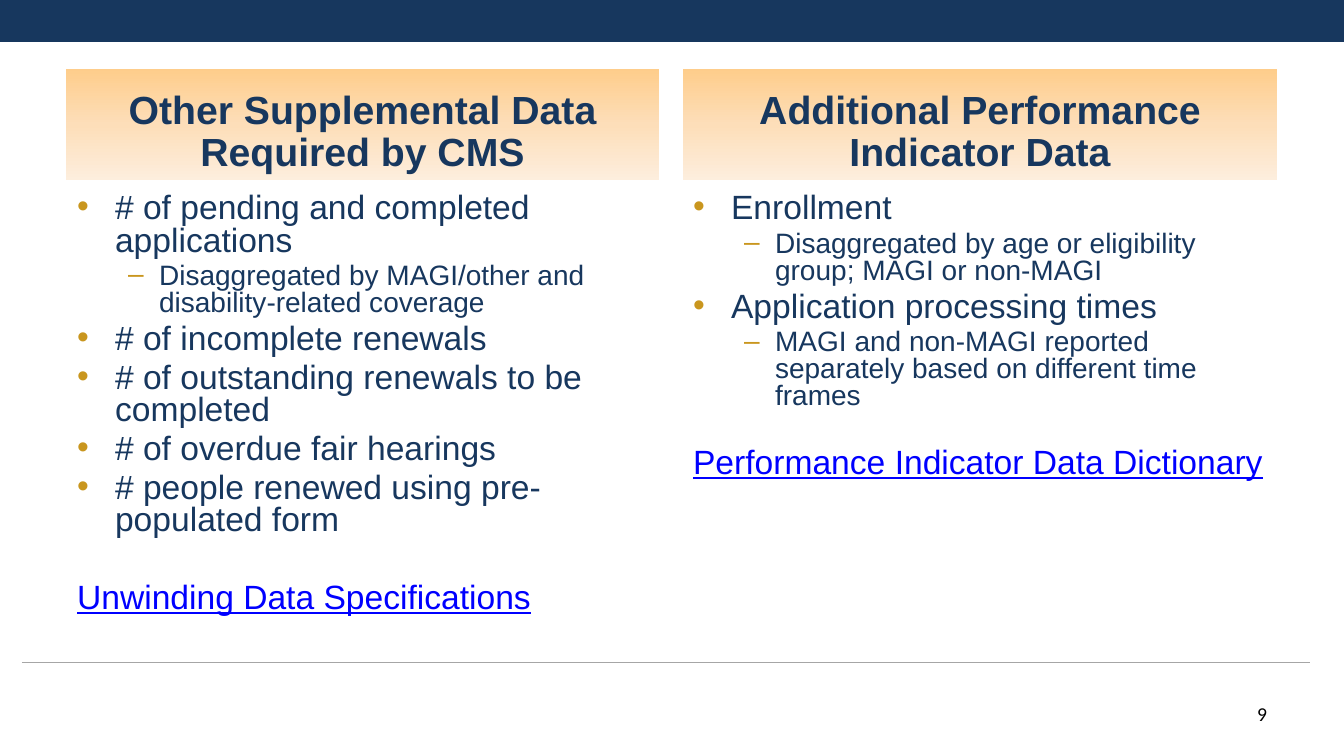
from copy import deepcopy
from dataclasses import dataclass

from lxml import etree
from pptx import Presentation
from pptx.dml.color import RGBColor
from pptx.enum.shapes import MSO_CONNECTOR, MSO_SHAPE
from pptx.enum.text import MSO_ANCHOR, MSO_AUTO_SIZE, PP_ALIGN
from pptx.oxml.ns import qn
from pptx.util import Inches, Pt

RECT = MSO_SHAPE.RECTANGLE
STRAIGHT = MSO_CONNECTOR.STRAIGHT
TOP, BOTTOM = MSO_ANCHOR.TOP, MSO_ANCHOR.BOTTOM
LEFT, CENTER, RIGHT = PP_ALIGN.LEFT, PP_ALIGN.CENTER, PP_ALIGN.RIGHT
FIXED = MSO_AUTO_SIZE.NONE
PX = Inches(1) / 100.8
ITEM, SUB, LINK = "item", "sub", "link"


def px(count):
    return round(count * PX)


@dataclass(frozen=True)
class Theme:
    navy: str = "17375E"
    gold: str = "C9961E"
    blue: str = "0000FF"
    gray: str = "A6A6A6"
    black: str = "000000"
    fade: tuple = ("FECD8B", "FDDEB9", "FDEEDD")
    font: str = "Arial"
    page_font: str = "Calibri"
    head: int = 28
    item: int = 24
    sub: int = 20
    page: int = 14


class Board:
    def __init__(self, deck, theme):
        self.theme = theme
        self.slide = deck.slides.add_slide(deck.slide_layouts[4])
        title = self.slide.shapes.title.element
        title.getparent().remove(title)

    def color(self, code):
        return RGBColor.from_string(code)

    def style(self, para, size, code, font=None, bold=False, line=False):
        for run in para.runs:
            run.font.size = Pt(size)
            run.font.name = font or self.theme.font
            run.font.bold = bold
            run.font.underline = line
            run.font.color.rgb = self.color(code)

    def place(self, idx, box, anchor):
        shape = self.slide.placeholders[idx]
        shape.left, shape.top, shape.width, shape.height = map(px, box)
        frame = shape.text_frame
        frame.auto_size = FIXED
        frame.word_wrap = True
        frame.vertical_anchor = anchor
        return shape

    def bar(self, box):
        shape = self.slide.shapes.add_shape(RECT, *map(px, box))
        shape.shadow.inherit = False
        shape.fill.solid()
        shape.fill.fore_color.rgb = self.color(self.theme.navy)
        shape.line.fill.background()

    def rule(self, x1, x2, y):
        line = self.slide.shapes.add_connector(STRAIGHT, px(x1), px(y), px(x2), px(y))
        line.line.color.rgb = self.color(self.theme.gray)
        line.line.width = Pt(0.75)
        etree.SubElement(line.element.spPr, qn("a:effectLst"))

    def fade(self, shape):
        shape.fill.gradient()
        shape.fill.gradient_angle = 270
        stops = shape.element.spPr.find(".//" + qn("a:gsLst"))
        stops.insert(1, deepcopy(stops[0]))
        for i, (stop, code) in enumerate(zip(shape.fill.gradient_stops, self.theme.fade)):
            stop.position = i / 2
            stop.color.rgb = self.color(code)

    def head(self, idx, box, text):
        shape = self.place(idx, box, BOTTOM)
        self.fade(shape)
        shape.text_frame.text = text
        para = shape.text_frame.paragraphs[0]
        para.alignment = CENTER
        para.line_spacing = 0.9
        para.space_before = Pt(0)
        self.style(para, self.theme.head, self.theme.navy, bold=True)

    def bullet(self, para, mark, left, hang):
        props = para._p.get_or_add_pPr()
        props.set("marL", str(px(left)))
        props.set("indent", str(px(-hang)))
        if not mark:
            etree.SubElement(props, qn("a:buNone"))
            return
        tint = etree.SubElement(props, qn("a:buClr"))
        etree.SubElement(tint, qn("a:srgbClr"), val=self.theme.gold)
        etree.SubElement(props, qn("a:buFont"), typeface=self.theme.font)
        etree.SubElement(props, qn("a:buChar"), char=mark)

    def list(self, idx, box, rows, gap):
        theme = self.theme
        kinds = {
            ITEM: ("•", 38, 38, theme.item, theme.navy, theme.item / 5),
            SUB: ("–", 82, 31, theme.sub, theme.navy, theme.sub / 5),
            LINK: ("", 0, 0, theme.item, theme.blue, gap),
        }
        frame = self.place(idx, box, TOP).text_frame
        frame.text = "\n".join(text for _, text in rows)
        for i, (para, (kind, _)) in enumerate(zip(frame.paragraphs, rows)):
            mark, left, hang, size, code, space = kinds[kind]
            para.level = int(kind == SUB)
            self.bullet(para, mark, left, hang)
            para.alignment = LEFT
            para.line_spacing = 0.8
            para.space_before = Pt(space if i else 0)
            self.style(para, size, code, line=kind == LINK)

    def page(self, box, text):
        frame = self.slide.shapes.add_textbox(*map(px, box)).text_frame
        frame.word_wrap = True
        frame.text = text
        para = frame.paragraphs[0]
        para.alignment = RIGHT
        self.style(para, self.theme.page, self.theme.black, self.theme.page_font)


def main():
    deck = Presentation()
    deck.slide_width, deck.slide_height = px(1344), px(756)
    board = Board(deck, Theme())
    board.bar((0, 0, 1344, 42))
    board.rule(22, 1310, 663)

    board.head(1, (66, 69, 593, 111), "Other Supplemental Data Required by CMS")
    board.list(2, (67, 189, 593, 474), [
        (ITEM, "# of pending and completed applications"),
        (SUB, "Disaggregated by MAGI/other and disability-related coverage"),
        (ITEM, "# of incomplete renewals"),
        (ITEM, "# of outstanding renewals to be completed"),
        (ITEM, "# of overdue fair hearings"),
        (ITEM, "# people renewed using pre-populated form"),
        (LINK, "Unwinding Data Specifications"),
    ], 32)

    board.head(3, (683, 69, 594, 111), "Additional Performance Indicator Data")
    board.list(4, (683, 189, 594, 407), [
        (ITEM, "Enrollment"),
        (SUB, "Disaggregated by age or eligibility group; MAGI or non-MAGI"),
        (ITEM, "Application processing times"),
        (SUB, "MAGI and non-MAGI reported separately based on different time frames"),
        (LINK, "Performance Indicator Data Dictionary"),
    ], 27)

    board.page((1176, 697, 101, 40), "9")
    deck.save("out.pptx")


if __name__ == "__main__":
    main()
